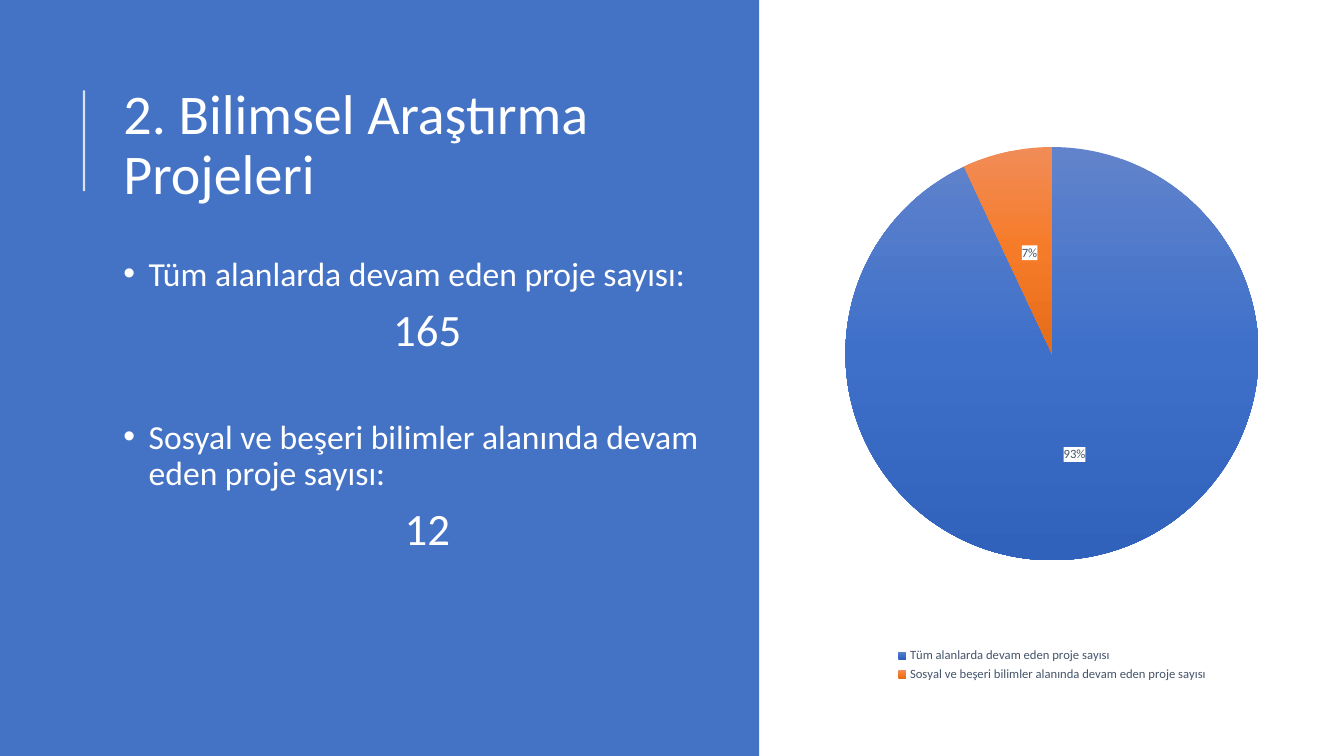
from dataclasses import dataclass

from lxml import etree
from pptx import Presentation
from pptx.chart.data import CategoryChartData
from pptx.dml.color import RGBColor
from pptx.enum.chart import XL_CHART_TYPE, XL_LABEL_POSITION, XL_LEGEND_POSITION
from pptx.enum.shapes import MSO_CONNECTOR, MSO_SHAPE
from pptx.enum.text import MSO_ANCHOR, MSO_AUTO_SIZE, PP_ALIGN
from pptx.oxml import parse_xml
from pptx.oxml.ns import nsdecls, qn
from pptx.util import Pt

TITLE = "2. Bilimsel Araştırma Projeleri"
# label, count, space before the label in points
ITEMS = [
    ("Tüm alanlarda devam eden proje sayısı", "165", 10),
    ("Sosyal ve beşeri bilimler alanında devam eden proje sayısı", "12", 46),
]
SHARES = [93, 7]

PX = 9525
SIZE = (1280, 720)
BOX = {
    "panel": (0, 0, 723, 720),
    "title": (108, 61, 532, 157),
    "body": (108, 240, 598, 413),
    "chart": (792, 67, 420, 586),
    "rule": (80, 182, 80, 86),
}
INDENT = 24


@dataclass(frozen=True)
class Theme:
    font: str = "Calibri"
    panel: str = "4472C4"
    light: str = "FFFFFF"
    note: str = "44546A"
    title: int = 40
    label: int = 24
    count: int = 32
    small: int = 9
    slices: tuple = (
        ("6183CB", "3E70CA", "3062BB"),
        ("F18C57", "F67B28", "E56C19"),
    )


THEME = Theme()


def emu(box):
    return [n * PX for n in box]


def style(font, size, color):
    for key, value in {"name": THEME.font, "size": Pt(size), "bold": False}.items():
        setattr(font, key, value)
    font.color.rgb = RGBColor.from_string(color)


def place(shape, box):
    for key, value in zip(("left", "top", "width", "height"), emu(box)):
        setattr(shape, key, value)


def write(para, text, size, **form):
    para.line_spacing = 0.9
    for key, value in form.items():
        setattr(para, key, value)
    run = para.add_run()
    run.text = text
    style(run.font, size, THEME.light)


def bullet(para, shown):
    props = para._p.get_or_add_pPr()
    inset = INDENT * PX if shown else 0
    props.set("marL", str(inset))
    props.set("indent", str(-inset))
    if shown:
        etree.SubElement(props, qn("a:buChar")).set("char", "•")
    else:
        etree.SubElement(props, qn("a:buNone"))


def add_panel(slide):
    panel = slide.shapes.add_shape(MSO_SHAPE.RECTANGLE, *emu(BOX["panel"]))
    panel.shadow.inherit = False
    panel.fill.solid()
    panel.fill.fore_color.rgb = RGBColor.from_string(THEME.panel)
    panel.line.fill.background()
    panel.element.getparent().insert(2, panel.element)


def add_rule(slide):
    rule = slide.shapes.add_connector(MSO_CONNECTOR.STRAIGHT, *emu(BOX["rule"]))
    rule.line.width = Pt(1.5)
    rule.line.color.rgb = RGBColor.from_string(THEME.light)
    props = rule.element.spPr
    tint = props.find(".//" + qn("a:srgbClr"))
    etree.SubElement(tint, qn("a:alpha")).set("val", "80000")
    etree.SubElement(props, qn("a:effectLst"))


def fill_text(slide):
    title, body = slide.placeholders
    for shape, name in ((title, "title"), (body, "body")):
        place(shape, BOX[name])
        shape.text_frame.word_wrap = True
        shape.text_frame.auto_size = MSO_AUTO_SIZE.NONE
    title.text_frame.vertical_anchor = MSO_ANCHOR.MIDDLE
    write(title.text_frame.paragraphs[0], TITLE, THEME.title, alignment=PP_ALIGN.LEFT)
    frame = body.text_frame
    frame.vertical_anchor = MSO_ANCHOR.TOP
    for spot, (label, count, gap) in enumerate(ITEMS):
        head = frame.add_paragraph() if spot else frame.paragraphs[0]
        write(head, label + ":", THEME.label, space_before=Pt(gap))
        bullet(head, True)
        total = frame.add_paragraph()
        write(total, count, THEME.count, space_before=Pt(10), alignment=PP_ALIGN.CENTER)
        bullet(total, False)


def shade(point, colors):
    """Give a pie slice a gradient that runs from top to bottom."""
    stops = "".join(
        f'<a:gs pos="{spot * 50000}"><a:srgbClr val="{color}"/></a:gs>'
        for spot, color in enumerate(colors)
    )
    point.format.line.fill.background()
    point.format.fill.background()
    props = point.format.fill._xPr
    props.replace(props.find(qn("a:noFill")), parse_xml(
        f'<a:gradFill {nsdecls("a")} rotWithShape="1"><a:gsLst>{stops}</a:gsLst>'
        '<a:lin ang="5400000" scaled="0"/></a:gradFill>'
    ))


def add_pie(slide):
    data = CategoryChartData()
    data.categories = [label for label, _, _ in ITEMS]
    data.add_series("Series 1", SHARES)
    chart = slide.shapes.add_chart(XL_CHART_TYPE.PIE, *emu(BOX["chart"]), data).chart
    chart.has_title = False
    style(chart.font, 10, "000000")
    chart.has_legend = True
    chart.legend.position = XL_LEGEND_POSITION.BOTTOM
    chart.legend.include_in_layout = False
    style(chart.legend.font, THEME.small, THEME.note)

    plot = chart.plots[0]
    plot.vary_by_categories = True
    for spot, colors in enumerate(THEME.slices):
        shade(plot.series[0].points[spot], colors)
    labels = plot.series[0].data_labels
    form = {
        "show_percentage": True,
        "show_value": False,
        "number_format": "0%",
        "number_format_is_linked": False,
        "position": XL_LABEL_POSITION.CENTER,
    }
    for key, value in form.items():
        setattr(labels, key, value)
    style(labels.font, THEME.small, THEME.note)
    labels._element.find(qn("c:txPr")).addprevious(parse_xml(
        f'<c:spPr {nsdecls("c", "a")}><a:solidFill><a:srgbClr val="{THEME.light}"/>'
        "</a:solidFill></c:spPr>"
    ))


def main():
    deck = Presentation()
    deck.slide_width, deck.slide_height = emu(SIZE)
    slide = deck.slides.add_slide(deck.slide_layouts[1])
    add_panel(slide)
    fill_text(slide)
    add_rule(slide)
    add_pie(slide)
    deck.save("out.pptx")


if __name__ == "__main__":
    main()
